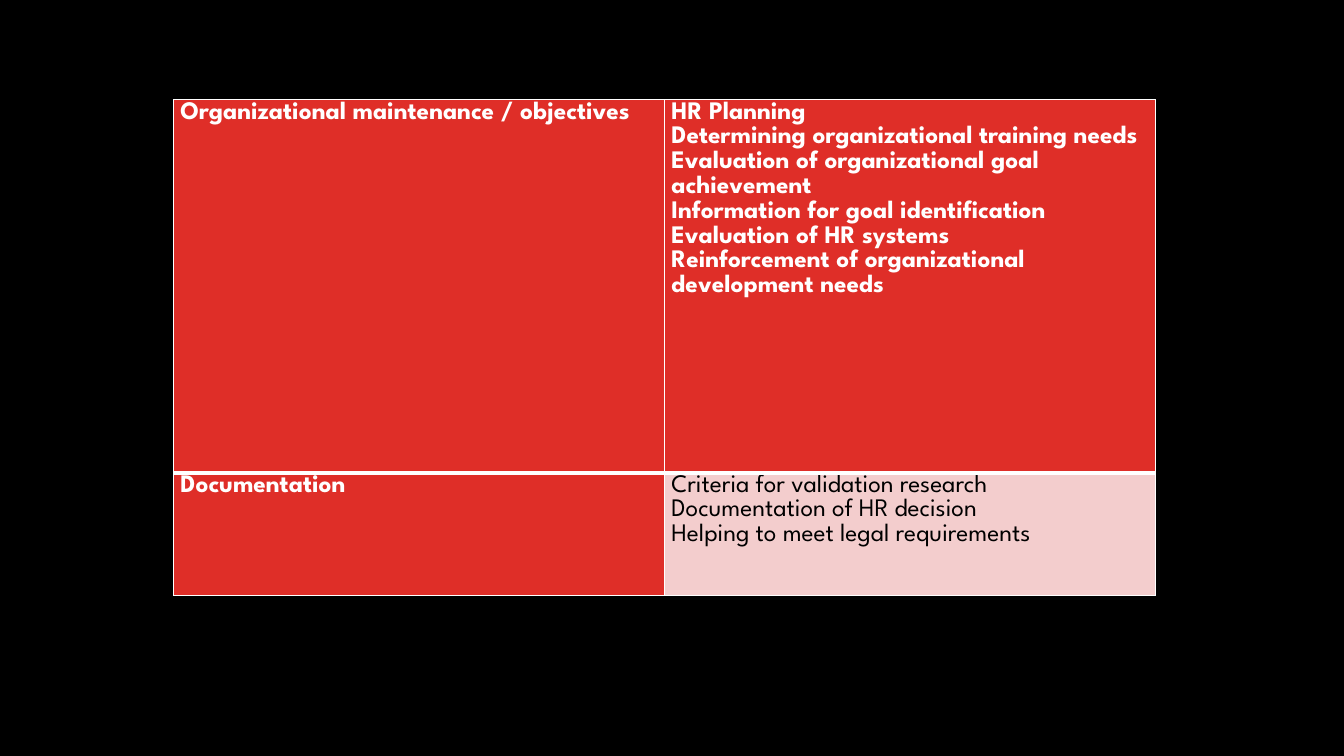
from lxml.etree import SubElement
from pptx import Presentation
from pptx.dml.color import RGBColor
from pptx.oxml.ns import qn
from pptx.util import Inches, Pt

COLORS = {"back": "000000", "red": "DF2E28", "pink": "F3CDCD",
          "white": "FFFFFF", "black": "000000"}
FONT = "League Spartan"
HEIGHTS = (3.7, 1.22)
WIDTH = 4.87
THIN, THICK = 1, 3

# Each cell: lines, fill, text colour, bold
ROWS = [
    [(["Organizational maintenance / objectives"], "red", "white", True),
     (["HR Planning",
       "Determining organizational training needs",
       "Evaluation of organizational goal achievement",
       "Information for goal identification",
       "Evaluation of HR systems",
       "Reinforcement of organizational development needs"],
      "red", "white", True)],
    [(["Documentation"], "red", "white", True),
     (["Criteria for validation research",
       "Documentation of HR decision",
       "Helping to meet legal requirements"], "pink", "black", False)],
]


def rgb(name):
    return RGBColor.from_string(COLORS[name])


def add_edges(cell, top, bottom):
    """Draw white borders; call before the cell is filled."""
    props = cell._tc.get_or_add_tcPr()
    for side, width in (("L", THIN), ("R", THIN), ("T", top), ("B", bottom)):
        line = SubElement(props, qn(f"a:ln{side}"), w=str(Pt(width)))
        fill = SubElement(line, qn("a:solidFill"))
        SubElement(fill, qn("a:srgbClr"), val=COLORS["white"])


def fill_cell(cell, lines, fill, color, bold):
    cell.fill.solid()
    cell.fill.fore_color.rgb = rgb(fill)
    cell.margin_left = cell.margin_right = Inches(0.07)
    cell.margin_top = cell.margin_bottom = 0
    cell.text = "\n".join(lines)
    for para in cell.text_frame.paragraphs:
        para.line_spacing = 1.07
        font = para.font
        font.name, font.size, font.bold = FONT, Pt(18), bold
        font.color.rgb = rgb(color)


def add_grid(slide):
    frame = slide.shapes.add_table(
        len(ROWS), 2, Inches(1.72), Inches(0.99),
        Inches(2 * WIDTH), Inches(sum(HEIGHTS)))
    table = frame.table
    for col in table.columns:
        col.width = Inches(WIDTH)
    last = len(ROWS) - 1
    for r, (row, height) in enumerate(zip(ROWS, HEIGHTS)):
        table.rows[r].height = Inches(height)
        for c, item in enumerate(row):
            cell = table.cell(r, c)
            add_edges(cell, THICK if r else THIN, THICK if r < last else THIN)
            fill_cell(cell, *item)


def main():
    deck = Presentation()
    deck.slide_width, deck.slide_height = Inches(13.33), Inches(7.5)
    slide = deck.slides.add_slide(deck.slide_layouts[6])
    back = slide.background.fill
    back.solid()
    back.fore_color.rgb = rgb("back")
    add_grid(slide)
    deck.save("out.pptx")


if __name__ == "__main__":
    main()
